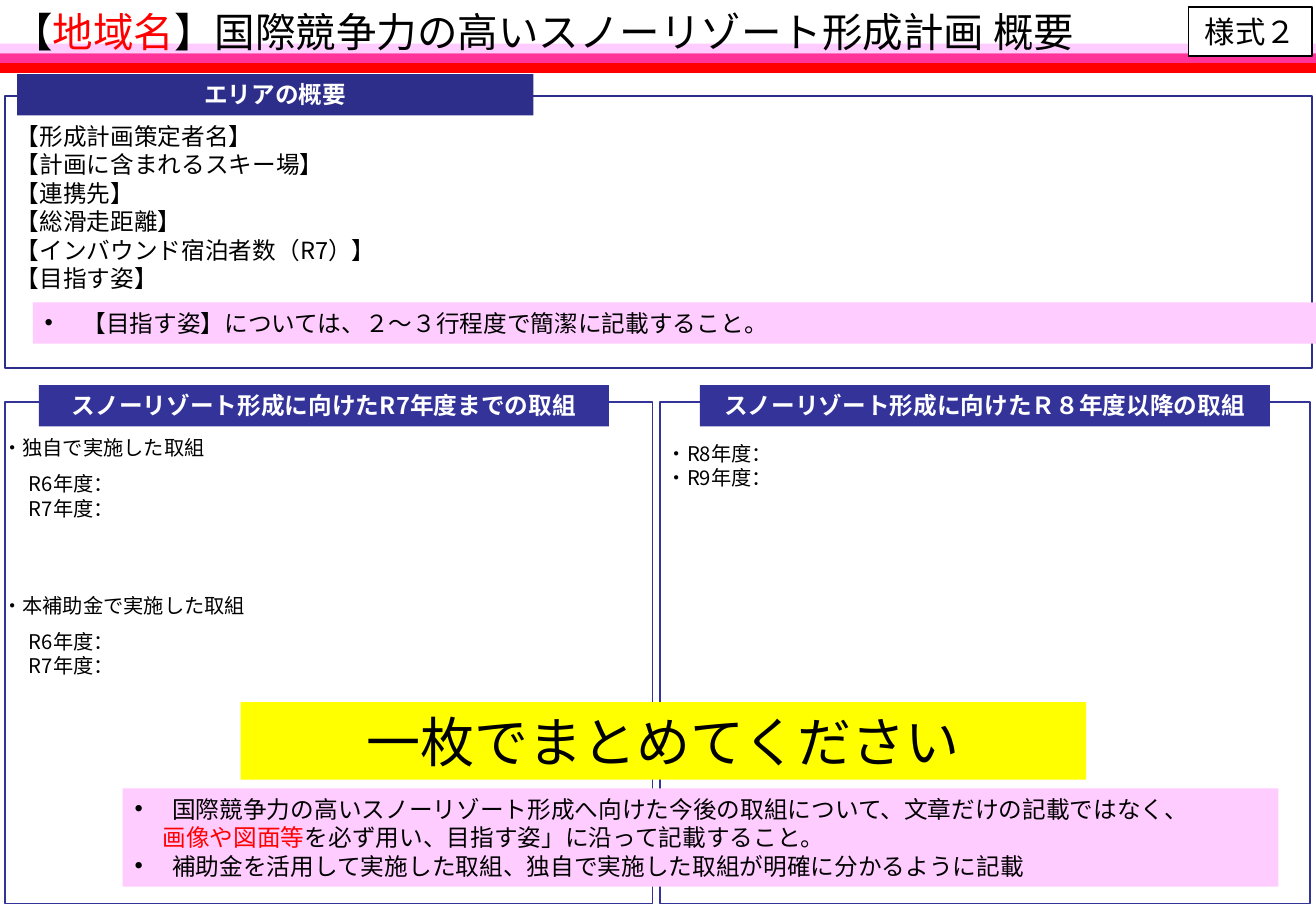
from dataclasses import dataclass

from lxml.etree import SubElement
from pptx import Presentation
from pptx.dml.color import RGBColor
from pptx.enum.shapes import MSO_SHAPE as Shape
from pptx.enum.text import MSO_ANCHOR as Anchor, MSO_AUTO_SIZE as AutoSize, PP_ALIGN as Align
from pptx.oxml.ns import qn
from pptx.util import Inches, Pt


@dataclass(frozen=True)
class Theme:
    """Colours, fonts and type sizes of the slide."""
    black: str = "000000"
    white: str = "FFFFFF"
    red: str = "FF0000"
    rose: str = "FF3399"
    pink: str = "FFCCFF"
    yellow: str = "FFFF00"
    navy: str = "2D2D8A"
    indigo: str = "333399"
    japanese: str = "Noto Sans CJK JP"
    latin: str = "Arial"
    title: int = 24
    notice: int = 32
    label: int = 18
    body: int = 14
    small: int = 12
    line_ratio: float = 1.21


THEME = Theme()
BULLET_INDENT = 0.31


@dataclass(frozen=True)
class Style:
    """Type style shared by the paragraphs of one box."""
    size: int = THEME.body
    color: str = THEME.black
    font: str = THEME.japanese
    bold: bool = False
    align: Align = Align.LEFT


@dataclass(frozen=True)
class Piece:
    """A stretch of text that may differ from its box style."""
    text: str
    color: str = ""
    font: str = ""


@dataclass(frozen=True)
class Line:
    """A paragraph made of pieces, optionally bulleted or indented."""
    pieces: tuple
    bullet: bool = False
    indent: float = 0


HEADER = Style(color=THEME.white, font=THEME.latin, bold=True, align=Align.CENTER)
SMALL = Style(size=THEME.small)


def plain(*texts, bullet=False):
    """Make one single-piece line from each text."""
    indent = BULLET_INDENT if bullet else 0
    return [Line((Piece(text),), bullet, indent) for text in texts]


def format_run(run, piece, style):
    """Apply the style and the piece's own colour and font to a run."""
    run.font.size = Pt(style.size)
    run.font.bold = style.bold
    run.font.color.rgb = RGBColor.from_string(piece.color or style.color)
    run.font.name = piece.font or style.font
    properties = run.font._element
    east_asian = SubElement(properties, qn("a:ea"), typeface=run.font.name)
    properties.find(qn("a:latin")).addnext(east_asian)


def format_paragraph(paragraph, line, style):
    """Set the bullet, indent, spacing and alignment of a paragraph."""
    properties = paragraph._p.get_or_add_pPr()
    properties.set("marL", str(Inches(line.indent)))
    properties.set("indent", str(-Inches(line.indent) if line.bullet else 0))
    if line.bullet:
        SubElement(properties, qn("a:buFont"), typeface=THEME.latin)
        SubElement(properties, qn("a:buChar"), char="•")
    else:
        SubElement(properties, qn("a:buNone"))
    paragraph.alignment = style.align
    paragraph.line_spacing = Pt(round(style.size * THEME.line_ratio, 1))
    paragraph.space_before = Pt(0)


def write(shape, lines, style, anchor=Anchor.TOP):
    """Fill a shape with styled lines."""
    frame = shape.text_frame
    frame.word_wrap = True
    frame.auto_size = AutoSize.NONE
    frame.vertical_anchor = anchor
    frame.text = "\n".join([""] * len(lines))
    for paragraph, line in zip(frame.paragraphs, lines):
        format_paragraph(paragraph, line, style)
        for piece in line.pieces:
            run = paragraph.add_run()
            run.text = piece.text
            format_run(run, piece, style)


def add_box(slide, place, fill=None, outline=None):
    """Add a rectangle with an optional fill and outline."""
    shape = slide.shapes.add_shape(Shape.RECTANGLE, *map(Inches, place))
    shape.shadow.inherit = False
    if fill:
        shape.fill.solid()
        shape.fill.fore_color.rgb = RGBColor.from_string(fill)
    else:
        shape.fill.background()
    if outline:
        shape.line.color.rgb = RGBColor.from_string(outline)
        shape.line.width = Pt(1)
    else:
        shape.line.fill.background()
    return shape


def add_text(slide, place, lines, style):
    """Add a text box."""
    write(slide.shapes.add_textbox(*map(Inches, place)), lines, style)


def fill_placeholder(placeholder, place, lines, style, anchor=Anchor.TOP):
    """Move a placeholder to the front, place it and write its text."""
    placeholder.element.getparent().append(placeholder.element)
    placeholder.left, placeholder.top, placeholder.width, placeholder.height = map(Inches, place)
    write(placeholder, lines, style, anchor)


def add_title(slide):
    """Add the striped band, the title and the form label."""
    for index, color in enumerate((THEME.pink, THEME.rose, THEME.red)):
        add_box(slide, (0, 0.36 + 0.08 * index, 10.83, 0.08), color)
    title = Line((Piece("【"), Piece("地域名", THEME.red),
                  Piece("】国際競争力の高いスノーリゾート形成計画 概要")))
    fill_placeholder(slide.shapes.title, (0, 0, 9.78, 0.52), [title],
                     Style(size=THEME.title), Anchor.MIDDLE)
    label = add_box(slide, (9.78, 0.06, 1.02, 0.4), THEME.white, THEME.black)
    write(label, plain("様式２"),
          Style(size=THEME.label, font=THEME.latin, align=Align.CENTER))


def add_panel(slide, place, header_place, color, header):
    """Add an outlined panel with a filled header over its top edge."""
    add_box(slide, place, outline=color)
    write(add_box(slide, header_place, color), header, HEADER)


def add_overview(slide):
    """Add the area overview panel."""
    add_panel(slide, (0.04, 0.79, 10.76, 2.24), (0.14, 0.61, 4.25, 0.34),
              THEME.navy, plain("エリアの概要"))
    items = plain("【形成計画策定者名】", "【計画に含まれるスキー場】", "【連携先】",
                  "【総滑走距離】", "【インバウンド宿泊者数（R7）】", "【目指す姿】")
    fill_placeholder(slide.placeholders[1], (0.03, 0.95, 10.79, 1.51), items, Style())
    note = add_box(slide, (0.27, 2.49, 10.56, 0.34), THEME.pink)
    write(note, plain("【目指す姿】については、２～３行程度で簡潔に記載すること。", bullet=True), Style())


def add_initiatives(slide):
    """Add the past and future initiative panels."""
    past = Line((Piece("スノーリゾート形成に向けた"), Piece("R7", font=THEME.japanese),
                 Piece("年度までの取組")))
    add_panel(slide, (0.04, 3.31, 5.33, 4.13), (0.32, 3.17, 4.69, 0.34), THEME.indigo, [past])
    add_panel(slide, (5.43, 3.31, 5.35, 4.13), (5.76, 3.17, 4.69, 0.34), THEME.indigo,
              plain("スノーリゾート形成に向けたＲ８年度以降の取組"))
    for top, heading in ((3.53, "・独自で実施した取組"), (4.83, "・本補助金で実施した取組")):
        add_text(slide, (-0.08, top, 2.45, 0.3), plain(heading), SMALL)
        add_text(slide, (0.14, top + 0.3, 2.06, 0.5), plain("R6年度：", "R7年度："), SMALL)
    add_text(slide, (5.39, 3.58, 2.06, 0.5), plain("・R8年度：", "・R9年度："), SMALL)


def add_instructions(slide):
    """Add the one-page notice and the writing instructions."""
    notice = add_box(slide, (1.98, 5.78, 6.96, 0.64), THEME.yellow)
    write(notice, plain("一枚でまとめてください"),
          Style(size=THEME.notice, font=THEME.latin, align=Align.CENTER))
    first, last = plain(
        "国際競争力の高いスノーリゾート形成へ向けた今後の取組について、文章だけの記載ではなく、",
        "補助金を活用して実施した取組、独自で実施した取組が明確に分かるように記載", bullet=True)
    middle = Line((Piece("画像や図面等", THEME.red),
                   Piece("を必ず用い、目指す姿」に沿って記載すること。")), indent=0.23)
    write(add_box(slide, (1.01, 6.49, 9.51, 0.81), THEME.pink), [first, middle, last], Style())


def main():
    """Build and save the slide."""
    presentation = Presentation()
    presentation.slide_width = Inches(10.83)
    presentation.slide_height = Inches(7.5)
    slide = presentation.slides.add_slide(presentation.slide_layouts[1])
    add_title(slide)
    add_overview(slide)
    add_initiatives(slide)
    add_instructions(slide)
    presentation.save("out.pptx")


if __name__ == "__main__":
    main()
